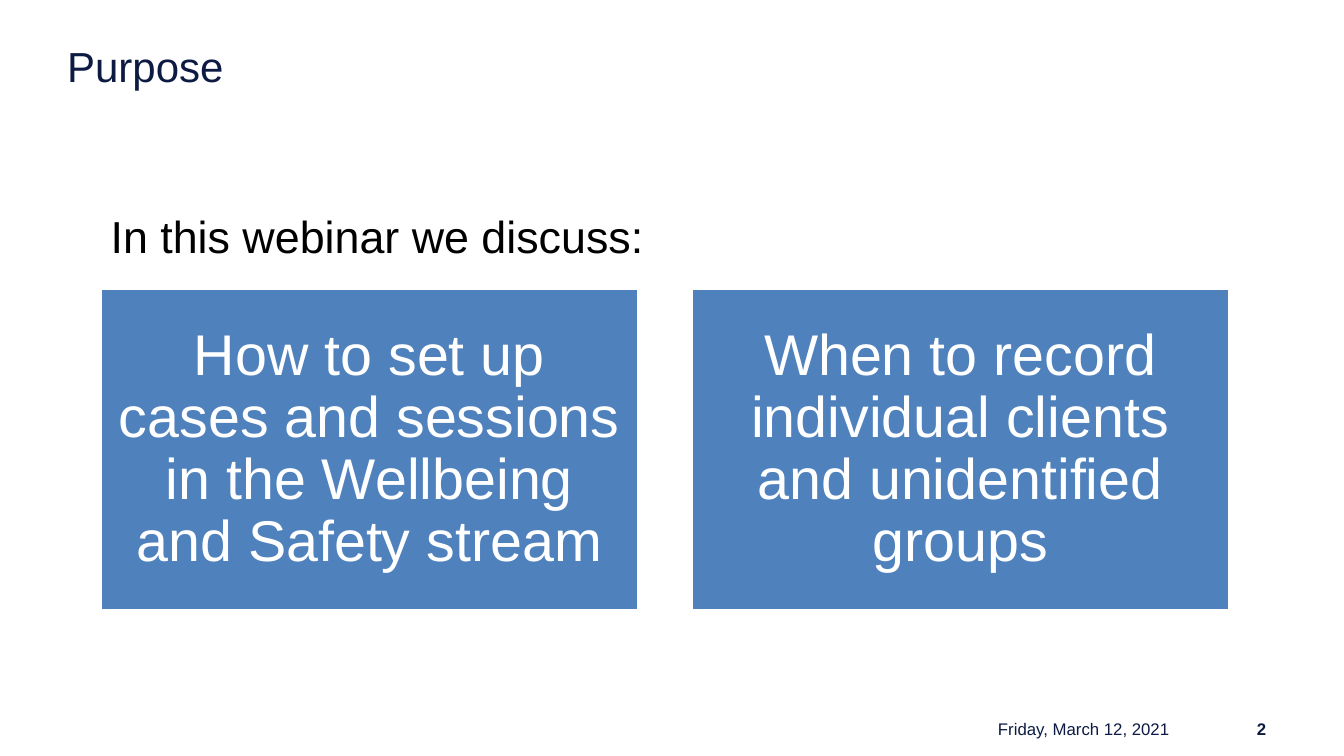
"""Build the Purpose slide of the webinar deck."""
import pptx
import pptx.dml.color
import pptx.enum.shapes
import pptx.enum.text
import pptx.util

Pt = pptx.util.Pt
RGBColor = pptx.dml.color.RGBColor
ALIGN = pptx.enum.text.PP_ALIGN
ANCHOR = pptx.enum.text.MSO_ANCHOR

NAVY = RGBColor(0x0D, 0x1B, 0x43)
BLUE = RGBColor(0x4F, 0x81, 0xBD)
WHITE = RGBColor(0xFF, 0xFF, 0xFF)
BLACK = RGBColor(0x00, 0x00, 0x00)

TOPICS = [
    "How to set up cases and sessions in the Wellbeing and Safety stream",
    "When to record individual clients and unidentified groups",
]
TOPIC_LEFT, TOPIC_TOP, TOPIC_WIDTH, TOPIC_HEIGHT = 72, 206, 384, 230.4
TOPIC_GAP = 38


def set_text(sp, text, size, color, align=ALIGN.LEFT, anchor=ANCHOR.TOP, bold=False):
    """Write one formatted run into a shape and return its text frame."""
    tf = sp.text_frame
    tf.word_wrap = True
    tf.auto_size = pptx.enum.text.MSO_AUTO_SIZE.NONE
    tf.vertical_anchor = anchor
    p = tf.paragraphs[0]
    p.alignment = align
    r = p.add_run()
    r.text = text
    r.font.name = "Arial"
    r.font.size = Pt(size)
    r.font.bold = bold
    r.font.color.rgb = color
    return tf


def set_insets(tf, inset):
    """Give a text frame the same inset on all sides."""
    tf.margin_left = tf.margin_top = tf.margin_right = tf.margin_bottom = Pt(inset)


def set_title(s, text):
    """Place and format the title placeholder."""
    sp = s.shapes.title
    sp.left, sp.top, sp.width, sp.height = Pt(48), Pt(28.8), Pt(864), Pt(47.5)
    set_insets(set_text(sp, text, 30, NAVY), 0)


def add_label(s, text, left, top, width, height, size, color, **style):
    """Add a text box."""
    sp = s.shapes.add_textbox(Pt(left), Pt(top), Pt(width), Pt(height))
    set_text(sp, text, size, color, **style)


def add_topic(s, text, left):
    """Add a topic rectangle with centred text."""
    sp = s.shapes.add_shape(
        pptx.enum.shapes.MSO_SHAPE.RECTANGLE,
        Pt(left), Pt(TOPIC_TOP), Pt(TOPIC_WIDTH), Pt(TOPIC_HEIGHT))
    sp.shadow.inherit = False
    sp.fill.solid()
    sp.fill.fore_color.rgb = BLUE
    sp.line.color.rgb = WHITE
    sp.line.width = Pt(2)
    tf = set_text(sp, text, 41, WHITE, ALIGN.CENTER, ANCHOR.MIDDLE)
    set_insets(tf, 12)
    tf.paragraphs[0].line_spacing = 0.9


def main():
    """Build and save the slide."""
    prs = pptx.Presentation()
    prs.slide_width, prs.slide_height = Pt(960), Pt(540)
    s = prs.slides.add_slide(prs.slide_layouts[5])
    set_title(s, "Purpose")
    footer = {"align": ALIGN.RIGHT, "anchor": ANCHOR.MIDDLE}
    add_label(s, "2", 833, 512.6, 78.5, 16.6, 12, NAVY, bold=True, **footer)
    add_label(s, "Friday, March 12, 2021", 618.5, 512.6, 224, 16.6, 12, NAVY, **footer)
    for i, topic in enumerate(TOPICS):
        add_topic(s, topic, TOPIC_LEFT + i * (TOPIC_WIDTH + TOPIC_GAP))
    add_label(s, "In this webinar we discuss:", 72, 145.5, 512, 46, 32, BLACK)
    prs.save("out.pptx")


if __name__ == "__main__":
    main()
